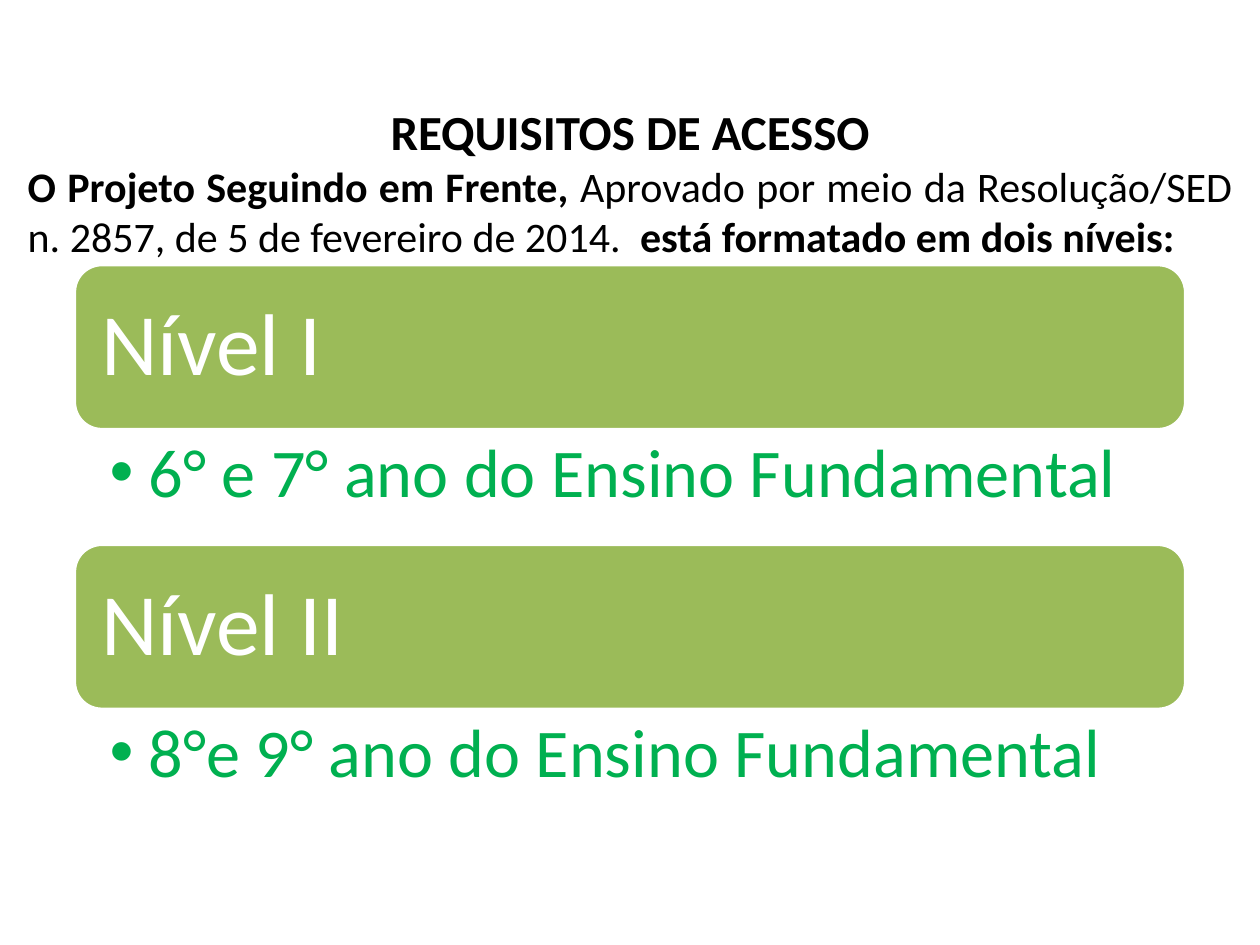
import pptx
import pptx.util
import pptx.dml.color
import pptx.enum.shapes
import pptx.enum.text
import pptx.oxml

Inches = pptx.util.Inches
Align = pptx.enum.text.PP_ALIGN
Anchor = pptx.enum.text.MSO_ANCHOR


def color(value):
    return pptx.dml.color.RGBColor.from_string(value)


class LevelSlide:
    font_name = "Calibri"
    ink, green, bar_fill, white = "000000", "00B050", "9BBB59", "FFFFFF"
    left, width = 0.059, 0.882

    def __init__(self, deck):
        self.deck = deck
        self.page = deck.slides.add_slide(deck.slide_layouts[3])

    def area(self, left, top, width, height):
        across, down = self.deck.slide_width, self.deck.slide_height
        return (int(left * across), int(top * down),
                int(width * across), int(height * down))

    def place(self, box, *shares):
        box.left, box.top, box.width, box.height = self.area(*shares)

    def frame(self, box, anchor, margins):
        frame = box.text_frame
        frame.word_wrap = True
        frame.auto_size = pptx.enum.text.MSO_AUTO_SIZE.NONE
        frame.vertical_anchor = anchor
        (frame.margin_left, frame.margin_top,
         frame.margin_right, frame.margin_bottom) = map(Inches, margins)
        return frame

    def style(self, span, size, fill, bold=False):
        span.font.name = self.font_name
        span.font.size = pptx.util.Pt(size)
        span.font.bold = bold
        span.font.color.rgb = color(fill)

    def title(self, heading, intro):
        box = self.page.shapes.title
        self.place(box, 0.012, 0.101, 0.976, 0.237)
        frame = self.frame(box, Anchor.TOP, (0.1, 0.05, 0.1, 0.05))
        frame.text = heading
        para = frame.paragraphs[0]
        para.alignment = Align.CENTER
        self.style(para.runs[0], 28, self.ink, True)
        para = frame.add_paragraph()
        para.alignment = Align.JUSTIFY
        for words, bold in intro:
            span = para.add_run()
            span.text = words
            self.style(span, 24, self.ink, bold)

    def bar(self, text, top, height):
        box = self.page.shapes.add_shape(
            pptx.enum.shapes.MSO_SHAPE.ROUNDED_RECTANGLE,
            *self.area(self.left, top, self.width, height))
        box.shadow.inherit = False
        box.fill.solid()
        box.fill.fore_color.rgb = color(self.bar_fill)
        box.line.color.rgb = color(self.white)
        box.line.width = pptx.util.Pt(2)
        frame = self.frame(box, Anchor.MIDDLE, (0.15,) * 4)
        frame.text = text
        para = frame.paragraphs[0]
        para.alignment = Align.LEFT
        para.line_spacing = 0.9
        self.style(para.runs[0], 50, self.white)

    def bullet(self, box, text, top, height):
        self.place(box, self.left, top, self.width, height)
        frame = self.frame(box, Anchor.TOP, (0.28, 0.07, 0.39, 0.07))
        frame.text = text
        para = frame.paragraphs[0]
        para.level = 1
        para.line_spacing = 0.9
        para.space_before = pptx.util.Pt(0)
        properties = para._p.get_or_add_pPr()
        properties.set("marL", str(Inches(0.31)))
        properties.set("indent", str(-Inches(0.31)))
        properties.append(pptx.oxml.parse_xml(
            '<a:buChar xmlns:a="http://schemas.openxmlformats.org/drawingml/2006/main" char="•"/>'))
        self.style(para.runs[0], 39, self.green)


def main():
    deck = pptx.Presentation()
    deck.slide_width, deck.slide_height = Inches(10), Inches(7.5)
    slide = LevelSlide(deck)
    slide.title("REQUISITOS DE ACESSO", [
        ("O Projeto Seguindo em Frente, ", True),
        ("Aprovado por meio da Resolução/SED n. 2857, de 5 de fevereiro de 2014. ", False),
        (" está formatado em dois níveis:", True),
    ])
    levels = [
        ("Nível I", "6° e 7° ano do Ensino Fundamental"),
        ("Nível II", "8°e 9° ano do Ensino Fundamental"),
    ]
    first_top, bar_height, list_height = 2.1 / 7.5, 1.31 / 7.5, 0.91 / 7.5
    bodies = list(slide.page.placeholders)[1:]
    for row, ((level, years), body) in enumerate(zip(levels, bodies)):
        top = first_top + row * (bar_height + list_height)
        slide.bar(level, top, bar_height)
        slide.bullet(body, years, top + bar_height, list_height)
    deck.save("out.pptx")


if __name__ == "__main__":
    main()
